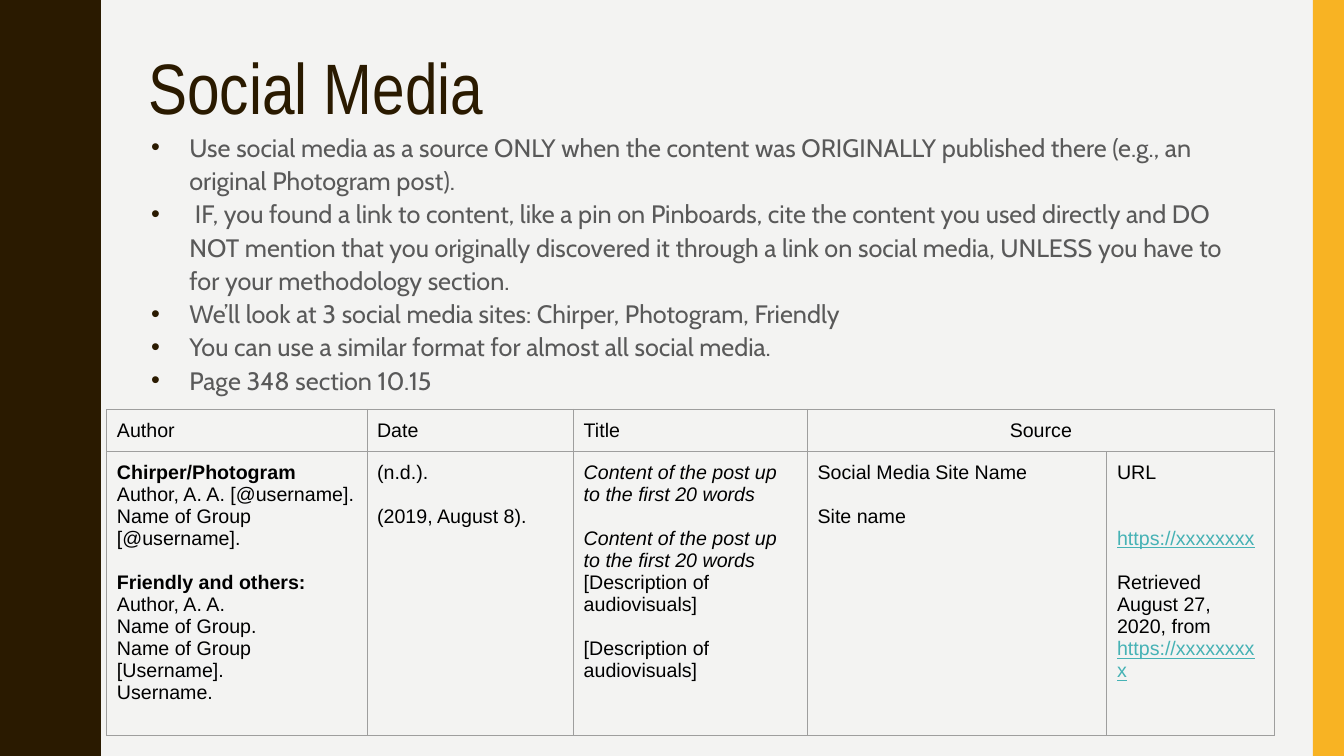
from lxml.etree import SubElement, fromstring
from pptx import Presentation
from pptx.dml.color import RGBColor
from pptx.enum.shapes import MSO_SHAPE
from pptx.enum.text import MSO_ANCHOR, MSO_AUTO_SIZE, PP_ALIGN
from pptx.oxml.ns import qn
from pptx.util import Inches, Pt

COLORS = {
    "paper": "F3F3F2", "brown": "2A1A00", "gold": "F8B323", "grey": "595959",
    "black": "000000", "link": "46B2B5", "border": "9E9E9E",
}
WIDTH, HEIGHT = 13.33, 7.5
NAMESPACE = "http://schemas.openxmlformats.org/drawingml/2006/main"

# Half of one wave, trough to crest, as (x, y)
WAVE_PERIOD = 1.5
HALF_WAVE = [
    (0.78, 0), (0.78, 0.07), (0.79, 0.14), (0.8, 0.2), (0.81, 0.25),
    (0.83, 0.29), (0.85, 0.33), (0.87, 0.38), (0.89, 0.42), (0.91, 0.46),
    (0.93, 0.5), (0.95, 0.55), (0.96, 0.61), (0.97, 0.68), (0.97, 0.75),
]

ADVICE = [
    "Use social media as a source ONLY when the content was ORIGINALLY published "
    "there (e.g., an original Photogram post).",
    " IF, you found a link to content, like a pin on Pinboards, cite the content you "
    "used directly and DO NOT mention that you originally discovered it through a "
    "link on social media, UNLESS you have to for your methodology section.",
    "We’ll look at 3 social media sites: Chirper, Photogram, Friendly",
    "You can use a similar format for almost all social media.",
    "Page 348 section 10.15",
]

# Each cell lists paragraphs: (lines of space above, [(text, style), ...])
COLUMN_WIDTHS = [2.58, 2.05, 2.32, 2.97, 1.66]
ROW_HEIGHTS = [0.42, 2.82]
LINE = 15.8
HEADINGS = ["Author", "Date", "Title", "Source"]
POST = "Content of the post up to the first 20 words"
AUDIOVISUALS = "[Description of audiovisuals]"
FORMATS = [
    [
        (0, [("Chirper/Photogram", "bold")]),
        (0, [("Author, A. A. [@username].", "")]),
        (0, [("Name of Group [@username].", "")]),
        (1, [("Friendly and others:", "bold")]),
        (0, [("Author, A. A.", "")]),
        (0, [("Name of Group.", "")]),
        (0, [("Name of Group [Username].", "")]),
        (0, [("Username.", "")]),
    ],
    [(0, [("(n.d.).", "")]), (1, [("(2019, August 8).", "")])],
    [
        (0, [(POST, "italic")]),
        (1, [(POST + " ", "italic"), (AUDIOVISUALS, "")]),
        (1, [(AUDIOVISUALS, "")]),
    ],
    [(0, [("Social Media Site Name", "")]), (1, [("Site name", "")])],
    [
        (0, [("URL", "")]),
        (2, [("https://xxxxxxxx", "link")]),
        (1, [("Retrieved August 27, 2020, from ", ""), ("https://xxxxxxxxx", "link")]),
    ],
]


def rgb(name):
    return RGBColor.from_string(COLORS[name])


def style_font(font, face, size, color):
    font.name, font.size = face, Pt(size)
    font.color.rgb = rgb(color)


def set_up_frame(frame):
    frame.word_wrap = True
    frame.auto_size = MSO_AUTO_SIZE.NONE
    frame.vertical_anchor = MSO_ANCHOR.TOP
    frame.margin_left = frame.margin_right = Inches(0.1)
    frame.margin_top = frame.margin_bottom = Inches(0.1)


def paint(shape, color):
    shape.shadow.inherit = False
    shape.fill.solid()
    shape.fill.fore_color.rgb = rgb(color)
    shape.line.fill.background()


def add_wavy_edge(slide, left, top, height):
    crest_to_trough = [(x, WAVE_PERIOD - y) for x, y in reversed(HALF_WAVE[:-1])]
    wave = HALF_WAVE + crest_to_trough
    points = [
        (left + x, top + y + n * WAVE_PERIOD)
        for n in range(round(height / WAVE_PERIOD)) for x, y in wave
    ]
    builder = slide.shapes.build_freeform(left, top, scale=Inches(1))
    builder.add_line_segments(points + [(left, top + height)], close=True)
    paint(builder.convert_to_shape(), "brown")


def add_gold_band(slide, left, top, width, height):
    band = slide.shapes.add_shape(
        MSO_SHAPE.RECTANGLE, Inches(left), Inches(top), Inches(width), Inches(height))
    paint(band, "gold")


def place_title(slide, left, top, width, height):
    title = slide.shapes.title
    title.left, title.top = Inches(left), Inches(top)
    title.width, title.height = Inches(width), Inches(height)
    set_up_frame(title.text_frame)
    title.text_frame.text = "Social Media"
    heading = title.text_frame.paragraphs[0]
    heading.alignment = PP_ALIGN.LEFT
    heading.line_spacing = 0.9
    style_font(heading.runs[0].font, "Arial Narrow", 51, "brown")


def add_bullet(paragraph):
    properties = paragraph._p.get_or_add_pPr()
    properties.set("marL", str(Inches(0.5)))
    properties.set("indent", str(Inches(-0.38)))
    bullet_color = SubElement(properties, qn("a:buClr"))
    SubElement(bullet_color, qn("a:srgbClr"), val=COLORS["brown"])
    SubElement(properties, qn("a:buFont"), typeface="Arial")
    SubElement(properties, qn("a:buChar"), char="•")


def add_advice(slide, left, top, width, height):
    advice = slide.shapes.add_textbox(
        Inches(left), Inches(top), Inches(width), Inches(height)).text_frame
    set_up_frame(advice)
    advice.text = "\n".join(ADVICE)
    for index, point in enumerate(advice.paragraphs):
        point.line_spacing = 1.1
        point.space_before = Pt(0 if index else 7)
        add_bullet(point)
        style_font(point.runs[0].font, "Cabin", 18, "grey")


def style_cell(cell):
    cell.fill.background()
    cell.vertical_anchor = MSO_ANCHOR.TOP
    cell.margin_left = cell.margin_right = Inches(0.1)
    cell.margin_top = cell.margin_bottom = Inches(0.1)
    properties = cell._tc.get_or_add_tcPr()
    for position, side in enumerate(["lnL", "lnR", "lnT", "lnB"]):
        properties.insert(position, fromstring(
            f'<a:{side} xmlns:a="{NAMESPACE}" w="{Pt(0.75)}"><a:solidFill>'
            f'<a:srgbClr val="{COLORS["border"]}"/></a:solidFill></a:{side}>'))


def fill_cell(cell, paragraphs):
    frame = cell.text_frame
    for index, (gap, pieces) in enumerate(paragraphs):
        paragraph = frame.add_paragraph() if index else frame.paragraphs[0]
        paragraph.space_before = Pt(gap * LINE)
        for text, style in pieces:
            run = paragraph.add_run()
            run.text = text
            style_font(run.font, "Arial", 14, "link" if style == "link" else "black")
            run.font.bold = style == "bold"
            run.font.italic = style == "italic"
            run.font.underline = style == "link"


def add_citation_table(slide, left, top):
    table = slide.shapes.add_table(
        len(ROW_HEIGHTS), len(COLUMN_WIDTHS), Inches(left), Inches(top),
        Inches(sum(COLUMN_WIDTHS)), Inches(sum(ROW_HEIGHTS))).table
    table.first_row = table.horz_banding = False
    for column, width in zip(table.columns, COLUMN_WIDTHS):
        column.width = Inches(width)
    for row, height in zip(table.rows, ROW_HEIGHTS):
        row.height = Inches(height)
    for cell in table.iter_cells():
        style_cell(cell)
    # The source heading spans site name and URL
    table.cell(0, 3).merge(table.cell(0, 4))
    for index, heading in enumerate(HEADINGS):
        fill_cell(table.cell(0, index), [(0, [(heading, "")])])
    table.cell(0, 3).text_frame.paragraphs[0].alignment = PP_ALIGN.CENTER
    for index, paragraphs in enumerate(FORMATS):
        fill_cell(table.cell(1, index), paragraphs)


def main():
    deck = Presentation()
    deck.slide_width, deck.slide_height = Inches(WIDTH), Inches(HEIGHT)
    slide = deck.slides.add_slide(deck.slide_layouts[5])
    slide.background.fill.solid()
    slide.background.fill.fore_color.rgb = rgb("paper")
    add_wavy_edge(slide, 0, 0, HEIGHT)
    add_gold_band(slide, 13.02, 0, 0.31, HEIGHT)
    place_title(slide, 1.37, 0.42, 11.13, 1.63)
    add_advice(slide, 1.28, 1.18, 11.13, 6.32)
    add_citation_table(slide, 1.06, 4.06)
    deck.save("out.pptx")


if __name__ == "__main__":
    main()
